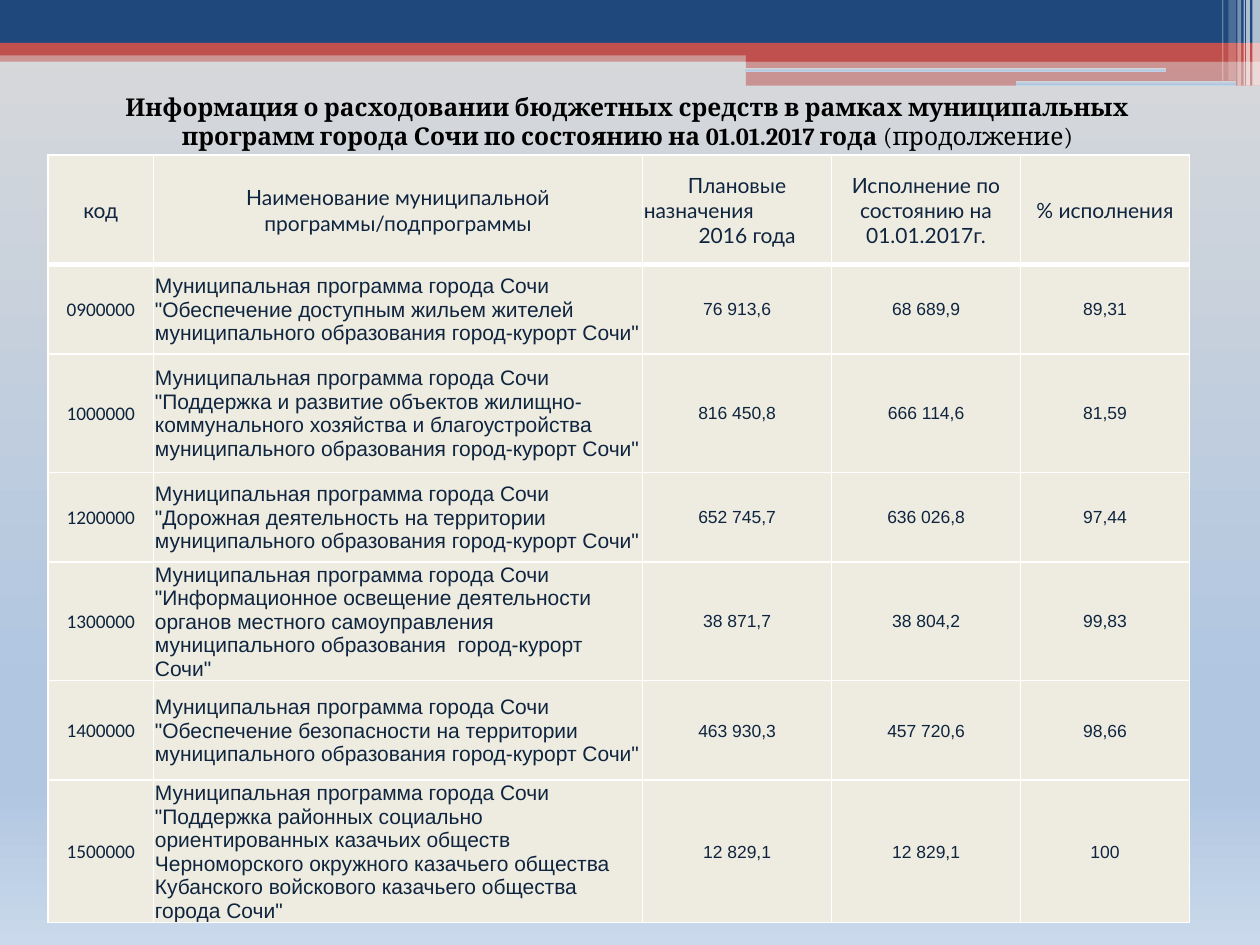
from dataclasses import dataclass

from lxml.etree import SubElement
from pptx import Presentation
from pptx.dml.color import RGBColor
from pptx.enum.shapes import MSO_SHAPE as SHAPE
from pptx.enum.text import MSO_ANCHOR as ANCHOR, MSO_AUTO_SIZE as AUTO, PP_ALIGN as ALIGN
from pptx.oxml.ns import qn
from pptx.util import Inches, Pt


@dataclass(frozen=True)
class Theme:
    navy: str = "1F497D"
    red: str = "C0504D"
    white: str = "FFFFFF"
    cell: str = "EEECE1"
    ink: str = "0F243E"
    black: str = "000000"
    sky: tuple = ((0, "D9D9D9"), (74, "B0C6E1"), (83, "B0C6E1"), (100, "CAD9EB"))
    title: tuple = ("Cambria", 14)
    header: tuple = ("Lato", 12)
    code: tuple = ("Calibri", 11)
    name: tuple = ("Arial", 12)
    value: tuple = ("Arial", 10)
    line: float = 1
    header_line: float = 3


class SlideBuilder:
    def __init__(self, prs, theme):
        self.theme = theme
        self.s = prs.slides.add_slide(prs.slide_layouts[6])

    def gradient(self, fill, owner):
        """Fill owner with the vertical sky gradient."""
        fill.gradient()
        grad = owner.find(".//" + qn("a:gradFill"))
        stops = grad.find(qn("a:gsLst"))
        for stop in list(stops):
            stops.remove(stop)
        for pos, color in self.theme.sky:
            stop = SubElement(stops, qn("a:gs"), pos=str(pos * 1000))
            SubElement(stop, qn("a:srgbClr"), val=color)
        grad.find(qn("a:lin")).set("ang", "5400000")

    def background(self):
        self.gradient(self.s.background.fill, self.s.element)

    def bar(self, box, color=None, alpha=100, kind=SHAPE.RECTANGLE):
        """Add a borderless bar; without a color it takes the sky gradient."""
        sp = self.s.shapes.add_shape(kind, *map(Inches, box))
        sp.shadow.inherit = False
        sp.line.fill.background()
        if color is None:
            self.gradient(sp.fill, sp.element.spPr)
            return
        sp.fill.solid()
        sp.fill.fore_color.rgb = RGBColor.from_string(color)
        if alpha < 100:
            clr = sp.element.spPr.find(".//" + qn("a:srgbClr"))
            SubElement(clr, qn("a:alpha"), val=str(alpha * 1000))

    def run(self, p, text, font, color, bold=False):
        r = p.add_run()
        r.text = text
        name, size = font
        for key, value in dict(name=name, size=Pt(size), bold=bold).items():
            setattr(r.font, key, value)
        r.font.color.rgb = RGBColor.from_string(color)

    def title(self, box, bold_text, plain_text):
        tf = self.s.shapes.add_textbox(*map(Inches, box)).text_frame
        tf.word_wrap = True
        tf.auto_size = AUTO.SHAPE_TO_FIT_TEXT
        p = tf.paragraphs[0]
        p.alignment = ALIGN.CENTER
        self.run(p, bold_text, self.theme.title, self.theme.black, True)
        self.run(p, plain_text, self.theme.title, self.theme.black)

    def borders(self, cell, widths):
        tcPr = cell._tc.get_or_add_tcPr()
        for i, (side, width) in enumerate(widths.items()):
            ln = SubElement(tcPr, qn("a:ln" + side), w=str(Pt(width)))
            SubElement(SubElement(ln, qn("a:solidFill")), qn("a:srgbClr"), val=self.theme.white)
            tcPr.insert(i, ln)

    def cell(self, cell, text, font, align, widths):
        """Each line of text becomes a paragraph."""
        inset = Inches(0.01)
        style = dict(vertical_anchor=ANCHOR.MIDDLE, margin_left=inset,
                     margin_right=inset, margin_top=inset, margin_bottom=0)
        for key, value in style.items():
            setattr(cell, key, value)
        cell.fill.solid()
        cell.fill.fore_color.rgb = RGBColor.from_string(self.theme.cell)
        self.borders(cell, widths)
        tf = cell.text_frame
        for i, line in enumerate(text.split("\n")):
            p = tf.add_paragraph() if i else tf.paragraphs[0]
            p.alignment = align
            self.run(p, line, font, self.theme.ink)

    def table(self, box, cols, heights, rows):
        t = self.theme
        table = self.s.shapes.add_table(len(rows), len(cols), *map(Inches, box)).table
        for col, width in zip(table.columns, cols):
            col.width = Inches(width)
        for row, height in zip(table.rows, heights):
            row.height = Inches(height)
        body_fonts = [t.code, t.name] + [t.value] * 3
        for i, row in enumerate(rows):
            widths = dict(L=t.line, R=t.line,
                          T=t.header_line if i == 1 else t.line,
                          B=t.header_line if i == 0 else t.line)
            for j, text in enumerate(row):
                font = body_fonts[j] if i else t.header
                align = ALIGN.LEFT if i and j == 1 else ALIGN.CENTER
                self.cell(table.cell(i, j), text, font, align, widths)
        return table


HEADER = ("код\u00a0".strip(), "Наименование муниципальной программы/подпрограммы",
          "Плановые\nназначения\n2016 года", "Исполнение по состоянию на 01.01.2017г.",
          "% исполнения")
PROGRAMS = [
    ("0900000", "Обеспечение доступным жильем жителей муниципального образования город-курорт Сочи",
     "76 913,6", "68 689,9", "89,31"),
    ("1000000", "Поддержка и развитие объектов жилищно-коммунального хозяйства и благоустройства "
     "муниципального образования город-курорт Сочи", "816 450,8", "666 114,6", "81,59"),
    ("1200000", "Дорожная деятельность на территории муниципального образования город-курорт Сочи",
     "652 745,7", "636 026,8", "97,44"),
    ("1300000", "Информационное освещение деятельности органов местного самоуправления "
     "муниципального образования  город-курорт Сочи", "38 871,7", "38 804,2", "99,83"),
    ("1400000", "Обеспечение безопасности на территории муниципального образования город-курорт Сочи",
     "463 930,3", "457 720,6", "98,66"),
    ("1500000", "Поддержка районных социально ориентированных казачьих обществ Черноморского "
     "окружного казачьего общества Кубанского войскового казачьего общества города Сочи",
     "12 829,1", "12 829,1", "100"),
]


def main():
    prs = Presentation()
    prs.slide_width, prs.slide_height = Inches(10), Inches(7.5)
    theme = Theme()
    b = SlideBuilder(prs, theme)
    b.background()

    for box, color, alpha in [
        ((0, 0.4, 10, 0.09), theme.red, 50),
        ((0, 0, 10, 0.34), theme.navy, 100),
        ((0, 0.34, 10, 0.1), theme.red, 100),
        ((5.92, 0.39, 4.08, 0.1), theme.red, 100),
        ((5.92, 0.48, 4.08, 0.2), theme.red, 50),
    ]:
        b.bar(box, color, alpha)
    for box in [(5.91, 0.54, 3.35, 0.03), (8.06, 0.64, 1.75, 0.04)]:
        b.bar(box, kind=SHAPE.ROUNDED_RECTANGLE)
    for left, width, height, alpha in [
        (9.94, 0.06, 0.68, 65), (9.89, 0.03, 0.68, 65), (9.87, 0.01, 0.68, 60),
        (9.82, 0.03, 0.68, 40), (9.75, 0.06, 0.64, 20), (9.7, 0.01, 0.64, 30),
    ]:
        b.bar((left, 0, width, height), theme.white, alpha)

    rows = [HEADER] + [(code, f'Муниципальная программа города Сочи "{name}"', *values)
                       for code, name, *values in PROGRAMS]
    table = b.table((0.38, 1.23, 9.06, 6.23), (0.84, 3.88, 1.5, 1.5, 1.34),
                    (0.87, 0.71, 0.94, 0.71, 0.87, 0.79, 1.01), rows)
    _, plan, year = table.cell(0, 2).text_frame.paragraphs
    plan.alignment = ALIGN.LEFT
    year._p.get_or_add_pPr().set("marL", str(Inches(0.16)))

    b.title((0.53, 0.68, 8.9, 0.57),
            "Информация о расходовании бюджетных средств в рамках муниципальных "
            "программ города Сочи по состоянию на 01.01.2017 года ", "(продолжение)")
    prs.save("out.pptx")


if __name__ == "__main__":
    main()
